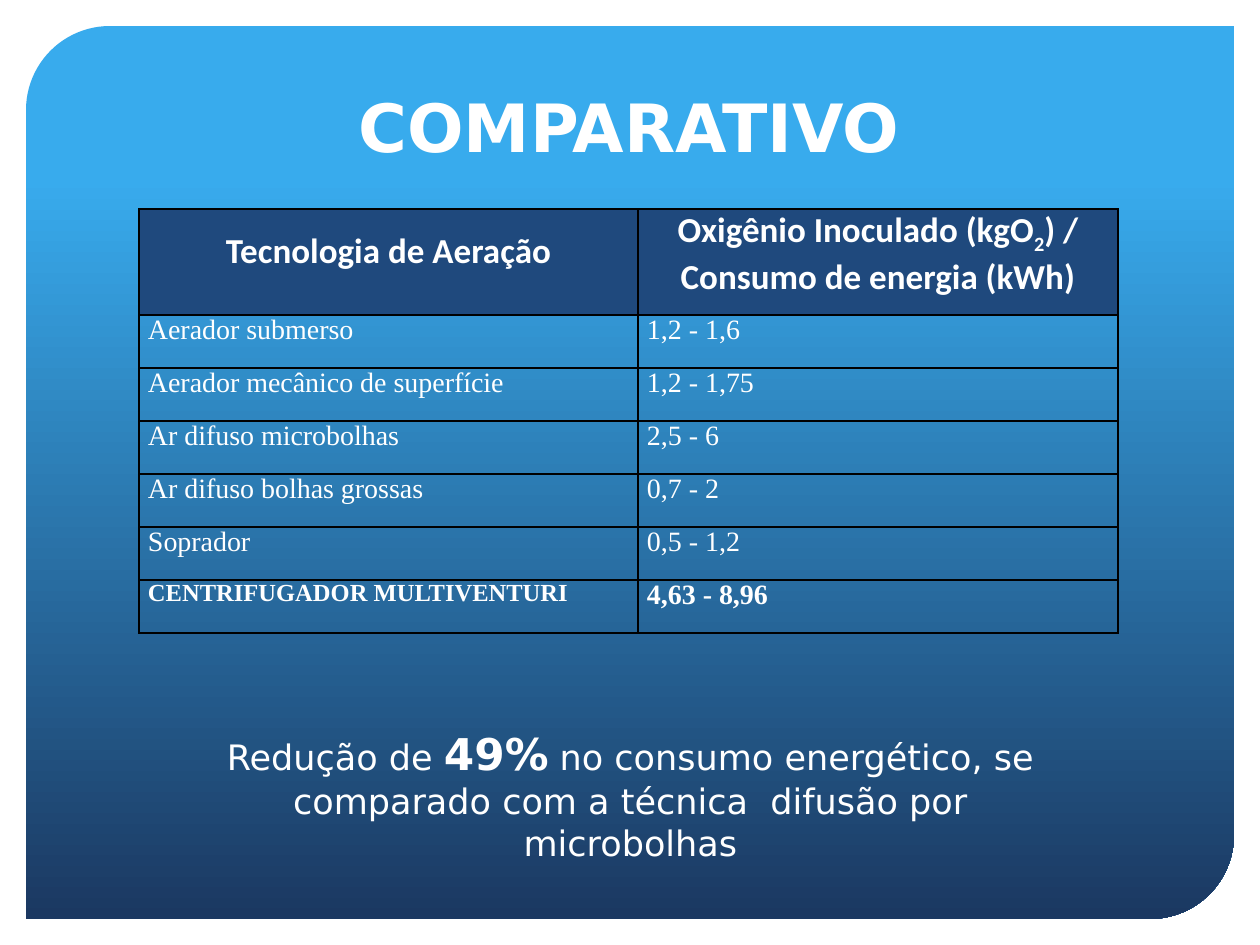
from pptx import Presentation
from pptx import util as u
from pptx.dml.color import RGBColor
from pptx.enum import shapes, text
from pptx.oxml import parse_xml
from pptx.oxml.ns import nsdecls

PX = 914400 // 126
WHITE = RGBColor(0xFF, 0xFF, 0xFF)
SKY = RGBColor(0x38, 0xAB, 0xED)
NAVY = RGBColor(0x1B, 0x38, 0x61)
HEADER_BLUE = RGBColor(0x1F, 0x49, 0x7D)
BORDER = RGBColor(0, 0, 0)

LEFT, CENTER, JUSTIFY = text.PP_ALIGN.LEFT, text.PP_ALIGN.CENTER, text.PP_ALIGN.JUSTIFY
SANS, SERIF, HEADING = "DejaVu Sans", "Times New Roman", "Calibri"

HEADERS = [
    ["Tecnologia de Aeração"],
    [["Oxigênio Inoculado (kgO", ("2", {"baseline": -25000}), ") /"],
     "Consumo de energia (kWh)"],
]
ROWS = [
    ("Aerador submerso", "1,2 - 1,6"),
    ("Aerador mecânico de superfície", "1,2 - 1,75"),
    ("Ar difuso microbolhas", "2,5 - 6"),
    ("Ar difuso bolhas grossas", "0,7 - 2"),
    ("Soprador", "0,5 - 1,2"),
    ("CENTRIFUGADOR MULTIVENTURI", "4,63 - 8,96"),
]
COLUMN_WIDTHS = (499, 480)
HEADER_HEIGHT, ROW_HEIGHT = 106, 53


def px(*lengths):
    return [u.Emu(length * PX) for length in lengths]


def add_span(para, words, size, font, bold=False, baseline=None):
    span = para.add_run()
    span.text = words
    span.font.size = u.Pt(size)
    span.font.name = font
    span.font.bold = bold
    span.font.color.rgb = WHITE
    if baseline:
        span._r.get_or_add_rPr().set("baseline", str(baseline))


def write(frame, lines, align=CENTER, **style):
    """Fill a frame; a line is a string or a list of strings and (string, overrides)."""
    for index, line in enumerate(lines):
        para = frame.add_paragraph() if index else frame.paragraphs[0]
        para.alignment = align
        for part in [line] if isinstance(line, str) else line:
            words, overrides = (part, {}) if isinstance(part, str) else part
            add_span(para, words, **{**style, **overrides})


def add_panel(page):
    panel = page.shapes.add_shape(
        shapes.MSO_SHAPE.ROUND_2_DIAG_RECTANGLE, *px(26, 26, 1208, 893))
    panel.adjustments[0] = 0.094
    panel.adjustments[1] = 0
    panel.shadow.inherit = False
    panel.line.fill.background()
    panel.fill.gradient()
    panel.fill.gradient_angle = 270
    for stop, position, color in zip(panel.fill.gradient_stops, (0.17, 1), (SKY, NAVY)):
        stop.position = position
        stop.color.rgb = color


def set_title(page):
    title = page.shapes.title
    title.left, title.top, title.width, title.height = px(107, 28, 1044, 144)
    frame = title.text_frame
    frame.auto_size = text.MSO_AUTO_SIZE.NONE
    frame.vertical_anchor = text.MSO_ANCHOR.BOTTOM
    write(frame, ["COMPARATIVO"], size=38, font=SANS, bold=True)


def format_cell(cell, fill=None, top=0):
    """Set margins, black borders and fill; borders must precede the fill in the XML."""
    cell.margin_left, cell.margin_right, cell.margin_top, cell.margin_bottom = px(9, 9, top, 0)
    for side in "LRTB":
        cell._tc.get_or_add_tcPr().append(parse_xml(
            f'<a:ln{side} {nsdecls("a")} w="12700"><a:solidFill>'
            f'<a:srgbClr val="{BORDER}"/></a:solidFill></a:ln{side}>'))
    if fill is None:
        cell.fill.background()
    else:
        cell.fill.solid()
        cell.fill.fore_color.rgb = fill


def add_comparison(page):
    height = HEADER_HEIGHT + ROW_HEIGHT * len(ROWS)
    table = page.shapes.add_table(
        len(ROWS) + 1, len(COLUMN_WIDTHS),
        *px(139, 209, sum(COLUMN_WIDTHS), height)).table
    table.first_row = table.horz_banding = False
    for column, width in zip(table.columns, px(*COLUMN_WIDTHS)):
        column.width = width
    for row, row_height in zip(table.rows, px(HEADER_HEIGHT, *[ROW_HEIGHT] * len(ROWS))):
        row.height = row_height

    for index, (lines, top) in enumerate(zip(HEADERS, (21, 0))):
        cell = table.cell(0, index)
        format_cell(cell, HEADER_BLUE, top)
        write(cell.text_frame, lines, size=20, font=HEADING, bold=True)
    for number, row in enumerate(ROWS, start=1):
        last = number == len(ROWS)
        sizes = (14, 16) if last else (16, 16)
        for index, (words, align, size) in enumerate(zip(row, (JUSTIFY, LEFT), sizes)):
            cell = table.cell(number, index)
            format_cell(cell)
            write(cell.text_frame, [words], align, size=size, font=SERIF, bold=last)


def add_conclusion(page):
    frame = page.shapes.add_textbox(*px(175, 721, 911, 150)).text_frame
    frame.word_wrap = True
    frame.auto_size = text.MSO_AUTO_SIZE.SHAPE_TO_FIT_TEXT
    write(frame, [[
        "Redução de ",
        ("49%", {"size": 25, "bold": True}),
        " no consumo energético, se comparado com a técnica  difusão por microbolhas",
    ]], size=20, font=SANS)


def main():
    deck = Presentation()
    deck.slide_width, deck.slide_height = px(1260, 945)
    page = deck.slides.add_slide(deck.slide_layouts.get_by_name("Title Only"))
    add_panel(page)
    # The title placeholder is created first, so bring it in front of the panel.
    page.shapes._spTree.append(page.shapes.title._element)
    set_title(page)
    add_conclusion(page)
    add_comparison(page)
    deck.save("out.pptx")


if __name__ == "__main__":
    main()
